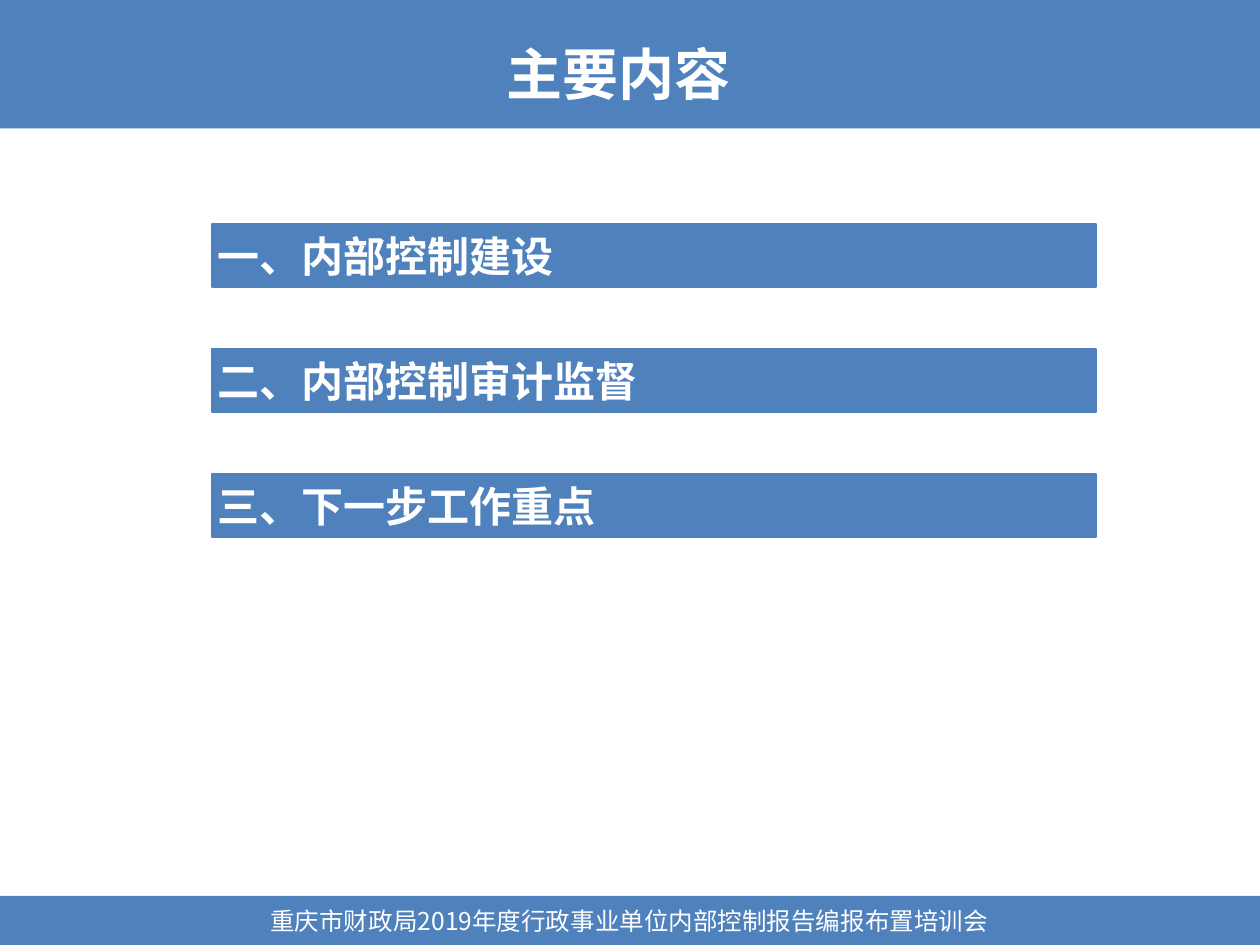
from lxml import etree
from pptx import Presentation
from pptx.dml.color import RGBColor
from pptx.enum.shapes import MSO_SHAPE
from pptx.enum.text import MSO_ANCHOR, PP_ALIGN
from pptx.oxml.ns import qn
from pptx.util import Inches, Pt

BLUE = RGBColor(0x4F, 0x81, 0xBD)
WHITE = RGBColor(0xFF, 0xFF, 0xFF)
FONT = "Noto Sans CJK SC"
RECT = MSO_SHAPE.RECTANGLE
MIDDLE = MSO_ANCHOR.MIDDLE
LEFT, CENTER = PP_ALIGN.LEFT, PP_ALIGN.CENTER


def add_bar(slide, x, y, w, h):
    s = slide.shapes.add_shape(RECT, Inches(x), Inches(y), Inches(w), Inches(h))
    s.shadow.inherit = False
    s.fill.solid()
    s.fill.fore_color.rgb = BLUE
    s.line.fill.background()
    return s


def write_text(s, text, size, bold, align):
    tf = s.text_frame
    tf.word_wrap = True
    tf.vertical_anchor = MIDDLE
    p = tf.paragraphs[0]
    p.alignment = align
    r = p.add_run()
    r.text = text
    for name, value in {"name": FONT, "size": Pt(size), "bold": bold}.items():
        setattr(r.font, name, value)
    r.font.color.rgb = WHITE
    etree.SubElement(r.font._element, qn("a:ea"), typeface=FONT)
    return p


prs = Presentation()
prs.slide_width, prs.slide_height = Inches(10), Inches(7.5)
slide = prs.slides.add_slide(prs.slide_layouts[6])

# Header and footer bands
add_bar(slide, 0, 0, 10, 1.02)
add_bar(slide, 0, 7.11, 10, 0.39)

# Title
title = slide.shapes.add_textbox(Inches(0.28), Inches(0.26), Inches(9), Inches(0.64))
p = write_text(title, "主要内容", 32, True, CENTER)
p._p.get_or_add_pPr().set("indent", str(Inches(0.26)))

# Agenda
topics = ["一、内部控制建设", "二、内部控制审计监督", "三、下一步工作重点"]
for i, topic in enumerate(topics):
    s = add_bar(slide, 1.68, 1.78 + 0.99 * i, 7.02, 0.5)
    s.line.color.rgb = BLUE
    s.line.width = Pt(1)
    tf = s.text_frame
    for side in ("left", "top", "right", "bottom"):
        setattr(tf, f"margin_{side}", Inches(0.05))
    write_text(s, topic, 24, True, LEFT)

# Footer
footer = slide.shapes.add_textbox(Inches(1.76), Inches(7.14), Inches(6.47), Inches(0.34))
write_text(footer, "重庆市财政局2019年度行政事业单位内部控制报告编报布置培训会", 14, False, CENTER)

prs.save("out.pptx")
